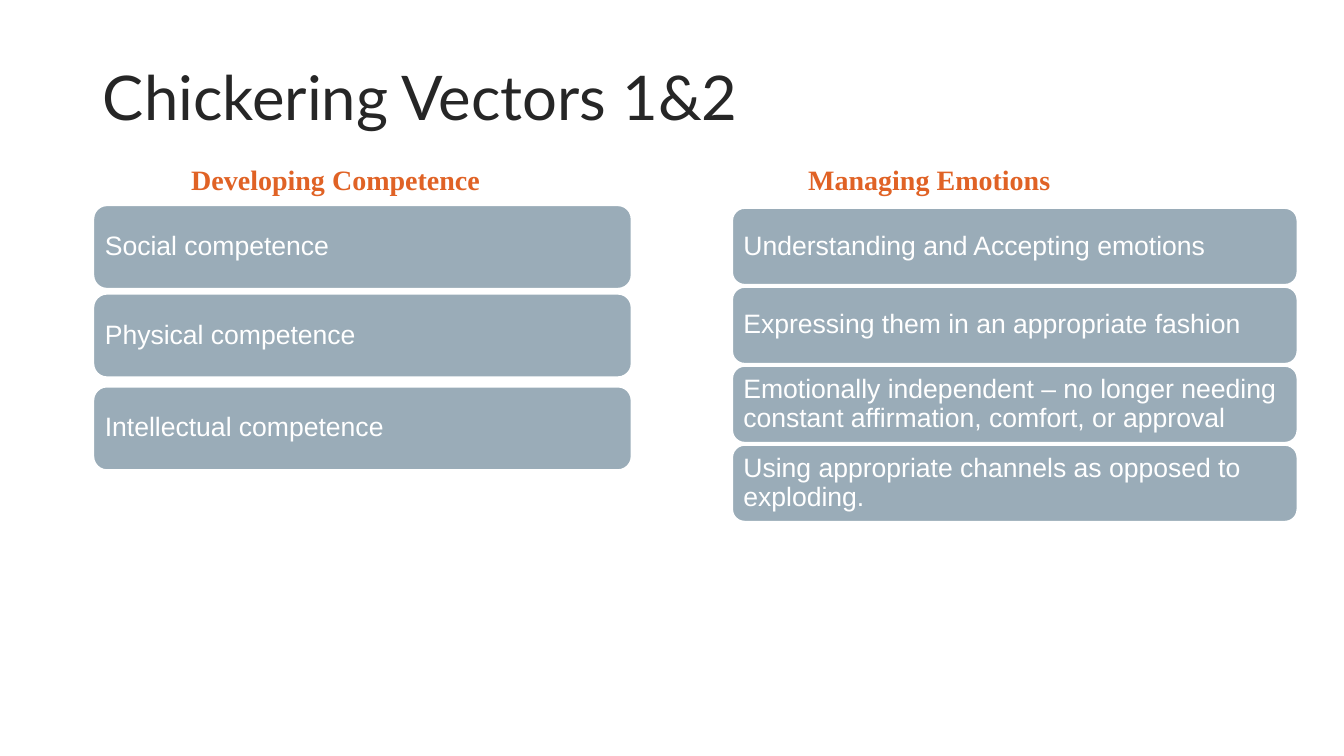
import pptx
import pptx.dml.color
import pptx.enum.shapes
import pptx.enum.text
import pptx.util

Cm = pptx.util.Cm
Pt = pptx.util.Pt
RGB = pptx.dml.color.RGBColor.from_string
PP_ALIGN = pptx.enum.text.PP_ALIGN
ANCHOR = pptx.enum.text.MSO_ANCHOR

THEME = {
    "title": {"font": {"name": "Lato", "size": Pt(44), "bold": False}, "color": RGB("262626")},
    "heading": {"font": {"name": "Times New Roman", "size": Pt(20), "bold": True}, "color": RGB("E06225")},
    "card": {"font": {"name": "Arial", "size": Pt(19), "bold": False}, "color": RGB("FFFFFF")},
    "card_fill": RGB("9AACB8"),
    "card_line": RGB("FFFFFF"),
}

VECTORS = [
    {
        "heading": "Developing Competence",
        "heading_left": 0,
        "left": 2.34,
        "width": 13.59,
        "height": 2.13,
        "tops": [5.16, 7.39, 9.73],
        "points": ["Social competence", "Physical competence", "Intellectual competence"],
    },
    {
        "heading": "Managing Emotions",
        "heading_left": 14.96,
        "left": 18.44,
        "width": 14.27,
        "height": 1.96,
        "tops": [5.23 + 1.99 * row for row in range(4)],
        "points": [
            "Understanding and Accepting emotions",
            "Expressing them in an appropriate fashion",
            "Emotionally independent – no longer needing constant affirmation, comfort, or approval",
            "Using appropriate channels as opposed to exploding.",
        ],
    },
]


def write(frame, text, style, align, spacing, layout):
    for key, value in layout.items():
        setattr(frame, key, value)
    frame.text = text
    paragraph = frame.paragraphs[0]
    paragraph.alignment = align
    paragraph.line_spacing = spacing
    for key, value in THEME[style]["font"].items():
        setattr(paragraph.runs[0].font, key, value)
    paragraph.runs[0].font.color.rgb = THEME[style]["color"]


deck = pptx.Presentation()
deck.slide_width = Cm(33.87)
deck.slide_height = Cm(19.05)
slide = deck.slides.add_slide(deck.slide_layouts.get_by_name("Title Only"))

title = slide.shapes.title
for side, length in {"left": 2.34, "top": 0.69, "width": 29.21, "height": 3.68}.items():
    setattr(title, side, Cm(length))
title_layout = {
    "word_wrap": True,
    "vertical_anchor": ANCHOR.MIDDLE,
    "auto_size": pptx.enum.text.MSO_AUTO_SIZE.NONE,
}
write(title.text_frame, "Chickering Vectors 1&2", "title", PP_ALIGN.LEFT, 0.9, title_layout)

heading_layout = {"word_wrap": True, "auto_size": pptx.enum.text.MSO_AUTO_SIZE.SHAPE_TO_FIT_TEXT}
card_layout = {"word_wrap": True, "vertical_anchor": ANCHOR.MIDDLE}
for side in ("left", "right", "top", "bottom"):
    card_layout["margin_" + side] = Cm(0.2)

for vector in VECTORS:
    heading = slide.shapes.add_textbox(Cm(vector["heading_left"]), Cm(3.96), Cm(16.92), Cm(1.12))
    write(heading.text_frame, vector["heading"], "heading", PP_ALIGN.CENTER, 1.0, heading_layout)

    cards = slide.shapes.add_group_shape()
    for top, point in zip(vector["tops"], vector["points"]):
        card = cards.shapes.add_shape(
            pptx.enum.shapes.MSO_SHAPE.ROUNDED_RECTANGLE,
            Cm(vector["left"]), Cm(top), Cm(vector["width"]), Cm(vector["height"]),
        )
        card.shadow.inherit = False
        card.fill.solid()
        card.fill.fore_color.rgb = THEME["card_fill"]
        card.line.color.rgb = THEME["card_line"]
        card.line.width = Pt(2)
        write(card.text_frame, point, "card", PP_ALIGN.LEFT, 0.9, card_layout)

deck.save("out.pptx")
